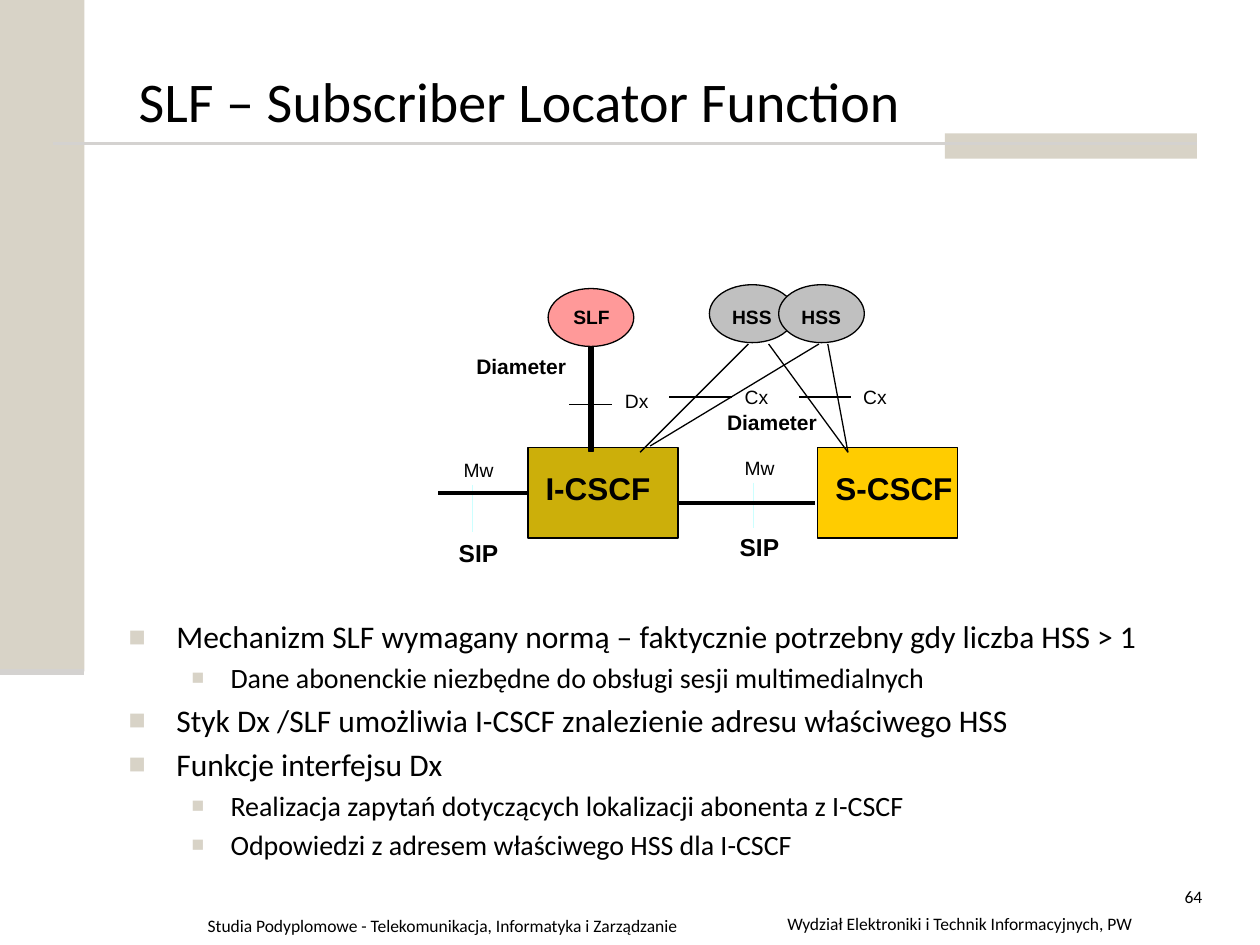
from lxml import etree
from pptx import Presentation
from pptx import util as u
from pptx.dml.color import RGBColor
from pptx.enum import shapes, text
from pptx.oxml import ns

COLORS = {
    "sand": "D8D3C7", "rule": "D4D2D0", "black": "000000", "gold": "CCAF0A",
    "yellow": "FFCC00", "pink": "FF9999", "gray": "C0C0C0", "cyan": "CCFFFF",
}
RECT, OVAL = shapes.MSO_SHAPE.RECTANGLE, shapes.MSO_SHAPE.OVAL
LEFT, CENTER, RIGHT = text.PP_ALIGN.LEFT, text.PP_ALIGN.CENTER, text.PP_ALIGN.RIGHT

presentation = Presentation()
presentation.slide_width, presentation.slide_height = u.Inches(10), u.Inches(7.5)
slide = presentation.slides.add_slide(presentation.slide_layouts[1])
CELL = presentation.slide_width / 100


def grid(*cells):
    return [u.Emu(round(cell * CELL)) for cell in cells]


def style(paragraph, size, name="Calibri", bold=False, align=LEFT):
    paragraph.alignment = align
    font = paragraph.font
    font.size, font.name, font.bold = u.Pt(size), name, bold
    font.color.rgb = RGBColor.from_string(COLORS["black"])


blocks = [
    (RECT, "sand", None, 0, 0, 6.7, 53.3),
    (RECT, "sand", None, 75, 10.6, 20, 2),
    (RECT, "gold", "black", 41.9, 35.5, 11.9, 7.2),
    (RECT, "yellow", "black", 64.9, 35.5, 11.1, 7.2),
    (OVAL, "pink", "black", 43.5, 22.9, 6.8, 4.6),
    (RECT, "black", "black", 46.7, 27.5, 0.4, 8.3),
    (OVAL, "gray", "black", 56.3, 22.6, 6.8, 4.6),
    (OVAL, "gray", "black", 61.8, 22.6, 6.8, 4.6),
]
for kind, fill, outline, *cells in blocks:
    shape = slide.shapes.add_shape(kind, *grid(*cells))
    shape.shadow.inherit = False
    shape.fill.solid()
    shape.fill.fore_color.rgb = RGBColor.from_string(COLORS[fill])
    if outline:
        shape.line.color.rgb = RGBColor.from_string(COLORS[outline])
        shape.line.width = u.Pt(0.75)
    else:
        shape.line.fill.background()

lines = [
    ("rule", 1.5, 4.2, 11.4, 95, 11.4),
    ("rule", 3.5, 0, 53.3, 6.7, 53.3),
    ("cyan", 0.75, 59.8, 38.3, 59.8, 41.9),
    ("cyan", 0.75, 37.5, 38.5, 37.5, 42.2),
    ("black", 0.75, 45.2, 32.1, 48.6, 32.1),
    ("black", 0.75, 63.4, 31.5, 67.5, 31.5),
    ("black", 0.75, 53.1, 31.5, 58.1, 31.5),
    ("black", 2.25, 34.8, 39.1, 41.9, 39.1),
    ("black", 2.25, 53.7, 39.9, 64.7, 39.9),
    ("black", 0.75, 50.8, 35.9, 59.4, 27.3),
    ("black", 0.75, 51.6, 35.4, 65, 27.3),
    ("black", 0.75, 61, 27.3, 67.3, 35.9),
    ("black", 0.75, 65.7, 27.3, 67.3, 35.9),
]
for color, width, *ends in lines:
    line = slide.shapes.add_connector(shapes.MSO_CONNECTOR.STRAIGHT, *grid(*ends))
    line.line.color.rgb = RGBColor.from_string(COLORS[color])
    line.line.width = u.Pt(width)
    etree.SubElement(line._element.spPr, ns.qn("a:effectLst"))

labels = [
    ("I-CSCF", 18, True, 43.3, 37.2, 8.4, 3),
    ("S-CSCF", 18, True, 66.3, 37.2, 9.4, 3),
    ("SLF", 11, True, 45.5, 24.2, 2.9, 1.9),
    ("HSS", 11, True, 58.1, 24.2, 3.2, 1.9),
    ("HSS", 11, True, 63.6, 24.2, 3.2, 1.9),
    ("Diameter", 12, True, 37.8, 28.1, 7.2, 2),
    ("Diameter", 12, True, 57.7, 32.5, 7.2, 2),
    ("Dx", 11, False, 49.6, 30.9, 1.9, 1.9),
    ("Cx", 11, False, 59.1, 30.6, 1.9, 1.9),
    ("Cx", 11, False, 68.5, 30.6, 1.9, 1.9),
    ("Mw", 11, False, 36.8, 36.4, 2.4, 1.9),
    ("Mw", 11, False, 59.1, 36.2, 2.4, 1.9),
    ("SIP", 14, True, 36.4, 42.7, 3.2, 2.4),
    ("SIP", 14, True, 58.7, 42.2, 3.2, 2.4),
]
for caption, size, bold, *cells in labels:
    frame = slide.shapes.add_textbox(*grid(*cells)).text_frame
    frame.margin_left = frame.margin_right = frame.margin_top = frame.margin_bottom = 0
    frame.word_wrap = False
    frame.auto_size = text.MSO_AUTO_SIZE.SHAPE_TO_FIT_TEXT
    frame.text = caption
    style(frame.paragraphs[0], size, "Arial", bold)

footers = [
    ("Studia Podyplomowe - Telekomunikacja, Informatyka i Zarządzanie", LEFT, 15.5, 72.1, 44.1, 2.7),
    ("Wydział Elektroniki i Technik Informacyjnych, PW", CENTER, 59.9, 72, 32.5, 2.8),
    ("64", RIGHT, 91.6, 69.8, 4.8, 5),
]
for caption, align, *cells in footers:
    frame = slide.shapes.add_textbox(*grid(*cells)).text_frame
    frame.word_wrap = True
    frame.text = caption
    style(frame.paragraphs[0], 10, align=align)

title = slide.shapes.title
title.left, title.top, title.width, title.height = grid(10, 2.8, 85, 10.3)
title.text_frame.text = "SLF – Subscriber Locator Function"
title.text_frame.vertical_anchor = text.MSO_ANCHOR.MIDDLE
title.text_frame.auto_size = text.MSO_AUTO_SIZE.NONE
style(title.text_frame.paragraphs[0], 32)

body = slide.placeholders[1]
body.left, body.top, body.width, body.height = grid(9.2, 48.5, 85, 24.4)
body.text_frame.auto_size = text.MSO_AUTO_SIZE.NONE
points = [
    (0, "Mechanizm SLF wymagany normą – faktycznie potrzebny gdy liczba HSS > 1"),
    (1, "Dane abonenckie niezbędne do obsługi sesji multimedialnych"),
    (0, "Styk Dx /SLF umożliwia I-CSCF znalezienie adresu właściwego HSS"),
    (0, "Funkcje interfejsu Dx"),
    (1, "Realizacja zapytań dotyczących lokalizacji abonenta z I-CSCF"),
    (1, "Odpowiedzi z adresem właściwego HSS dla I-CSCF"),
]
levels = [(18, 3.8, 3.8, 90), (16, 8.1, 3.1, 75)]
body.text_frame.text = "\n".join(caption for level, caption in points)
for index, (paragraph, (level, caption)) in enumerate(zip(body.text_frame.paragraphs, points)):
    size, margin, hanging, bullet_size = levels[level]
    paragraph.level = level
    properties = paragraph._p.get_or_add_pPr()
    indent_left, indent_first = grid(margin, -hanging)
    properties.set("marL", str(indent_left))
    properties.set("indent", str(indent_first))
    bullet_color = etree.SubElement(properties, ns.qn("a:buClr"))
    etree.SubElement(bullet_color, ns.qn("a:srgbClr"), val=COLORS["sand"])
    etree.SubElement(properties, ns.qn("a:buSzPct"), val=str(bullet_size * 1000))
    etree.SubElement(properties, ns.qn("a:buFont"), typeface="Arial")
    etree.SubElement(properties, ns.qn("a:buChar"), char="■")
    paragraph.space_before = u.Pt(size * 0.2 if index else 0)
    style(paragraph, size)

presentation.save("out.pptx")
